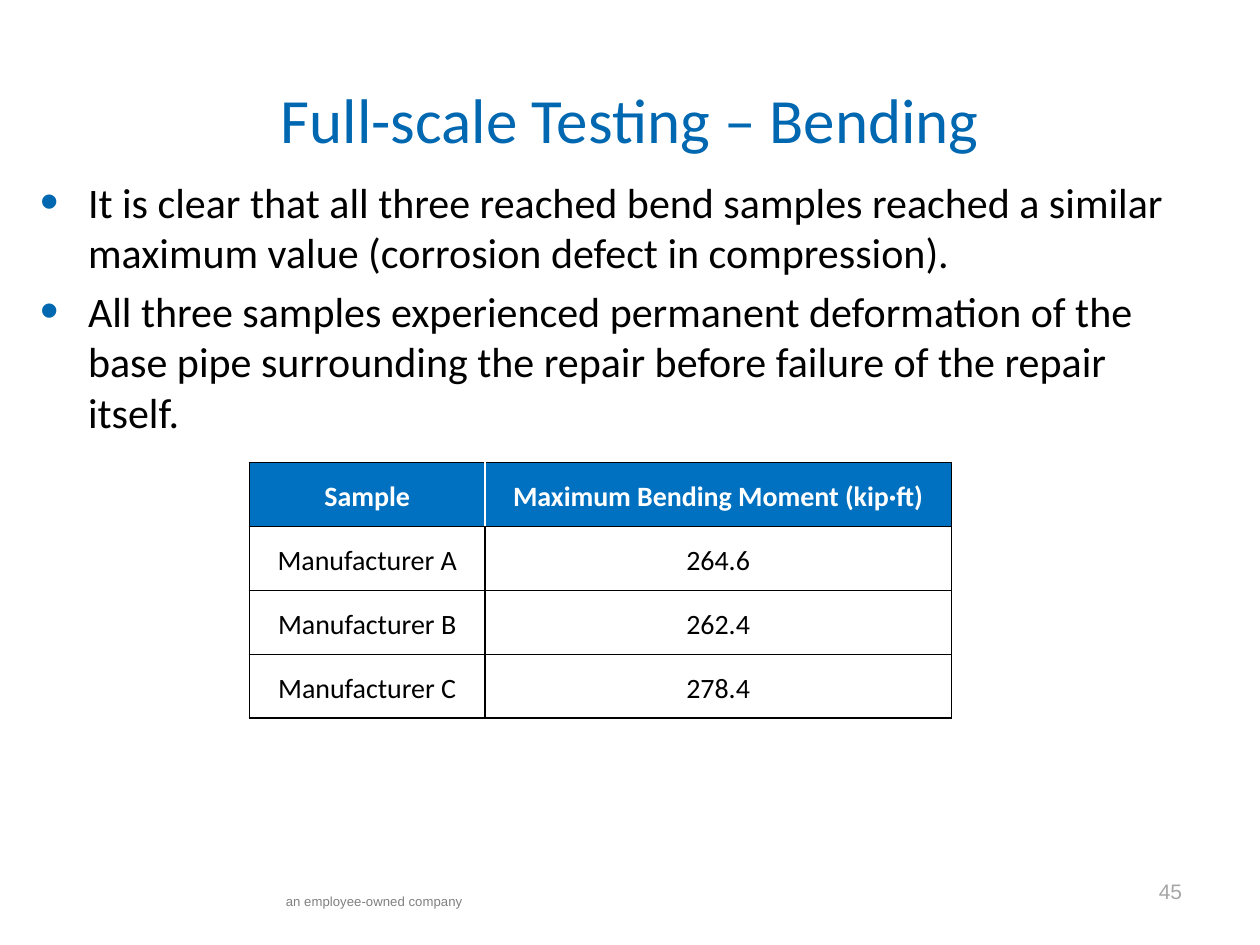
import pptx
import pptx.util
import pptx.dml.color
import pptx.enum.text
import pptx.oxml
import pptx.oxml.ns

Inches = pptx.util.Inches
Pt = pptx.util.Pt
ALIGN = pptx.enum.text.PP_ALIGN
ANCHOR = pptx.enum.text.MSO_ANCHOR


class Theme:
    blue = "0067B1"
    head = "0070C0"
    black = "000000"
    white = "FFFFFF"
    gray = "808080"
    pale = "A6A6A6"
    sans = "Calibri"
    plain = "Arial"
    title = 36
    body = 24
    cell = 16
    page = 12
    foot = 7.5


def style(para, size, color, face=Theme.sans, bold=False, **form):
    """Set the font of a paragraph, and any other paragraph values in form."""
    font = para.font
    for key, value in {"size": Pt(size), "name": face, "bold": bold}.items():
        setattr(font, key, value)
    font.color.rgb = pptx.dml.color.RGBColor.from_string(color)
    for key, value in form.items():
        setattr(para, key, value)


def add_xml(parent, tag, inner="", **attrs):
    pairs = " ".join(f'{key}="{value}"' for key, value in attrs.items())
    space = pptx.oxml.ns.nsdecls("a")
    parent.append(pptx.oxml.parse_xml(f"<a:{tag} {space} {pairs}>{inner}</a:{tag}>"))


deck = pptx.Presentation()
deck.slide_width, deck.slide_height = Inches(10), Inches(7.5)
slide = deck.slides.add_slide(deck.slide_layouts[5])
shapes = slide.shapes

# Title
title = shapes.title
place = {"left": 0.5, "top": 0.5, "width": 9, "height": 0.87}
for key, value in place.items():
    setattr(title, key, Inches(value))
title.text_frame.text = "Full-scale Testing – Bending"
title.text_frame.vertical_anchor = ANCHOR.MIDDLE
style(title.text_frame.paragraphs[0], Theme.title, Theme.blue, alignment=ALIGN.CENTER)

# Bullets
points = [
    "It is clear that all three reached bend samples reached a similar "
    "maximum value (corrosion defect in compression).",
    "All three samples experienced permanent deformation of the base pipe "
    "surrounding the repair before failure of the repair itself.",
]
box = shapes.add_textbox(Inches(0.22), Inches(1.35), Inches(9.42), Inches(2.02))
frame = box.text_frame
frame.word_wrap = True
frame.text = "\n".join(points)
for i, para in enumerate(frame.paragraphs):
    props = para._p.get_or_add_pPr()
    props.set("marL", str(Inches(0.38)))
    props.set("indent", str(-Inches(0.38)))
    add_xml(props, "buClr", f'<a:srgbClr val="{Theme.blue}"/>')
    add_xml(props, "buSzPct", val=125000)
    add_xml(props, "buFont", typeface=Theme.plain)
    add_xml(props, "buChar", char="•")
    style(para, Theme.body, Theme.black, space_before=Pt(4.8 if i else 0))

# Bending moments
rows = [
    ("Sample", "Maximum Bending Moment (kip·ft)"),
    ("Manufacturer A", "264.6"),
    ("Manufacturer B", "262.4"),
    ("Manufacturer C", "278.4"),
]
wide = [1.87, 3.7]
holder = shapes.add_table(len(rows), len(wide), Inches(1.98), Inches(3.67),
                          Inches(sum(wide)), Inches(2.03))
table = holder.table
for col, width in zip(table.columns, wide):
    col.width = Inches(width)
form = {"margin_left": Inches(0.07), "margin_right": Inches(0.07),
        "margin_top": 0, "margin_bottom": 0, "vertical_anchor": ANCHOR.MIDDLE}
for r, row in enumerate(rows):
    top = r == 0
    for c, text in enumerate(row):
        cell = table.cell(r, c)
        cell.text = text
        for key, value in form.items():
            setattr(cell, key, value)
        style(cell.text_frame.paragraphs[0], Theme.cell,
              Theme.white if top else Theme.black, bold=top,
              alignment=ALIGN.CENTER, line_spacing=1.15)
        inner = "R" if c == 0 else "L"
        for side in "LRTB":
            color = Theme.white if top and side == inner else Theme.black
            add_xml(cell._tc.get_or_add_tcPr(), "ln" + side,
                    f'<a:solidFill><a:srgbClr val="{color}"/></a:solidFill>', w=Pt(1))
        if top:
            cell.fill.solid()
            cell.fill.fore_color.rgb = pptx.dml.color.RGBColor.from_string(Theme.head)
        else:
            cell.fill.background()

# Footer
notes = [
    ("45", (8.83, 6.92, 0.92, 0.3), Theme.page, Theme.pale, ALIGN.CENTER),
    ("an employee-owned company", (2.17, 7.04, 1.75, 0.23),
     Theme.foot, Theme.gray, ALIGN.LEFT),
]
for text, spot, size, color, align in notes:
    frame = shapes.add_textbox(*map(Inches, spot)).text_frame
    frame.word_wrap = True
    frame.text = text
    style(frame.paragraphs[0], size, color, Theme.plain, alignment=align)

deck.save("out.pptx")
